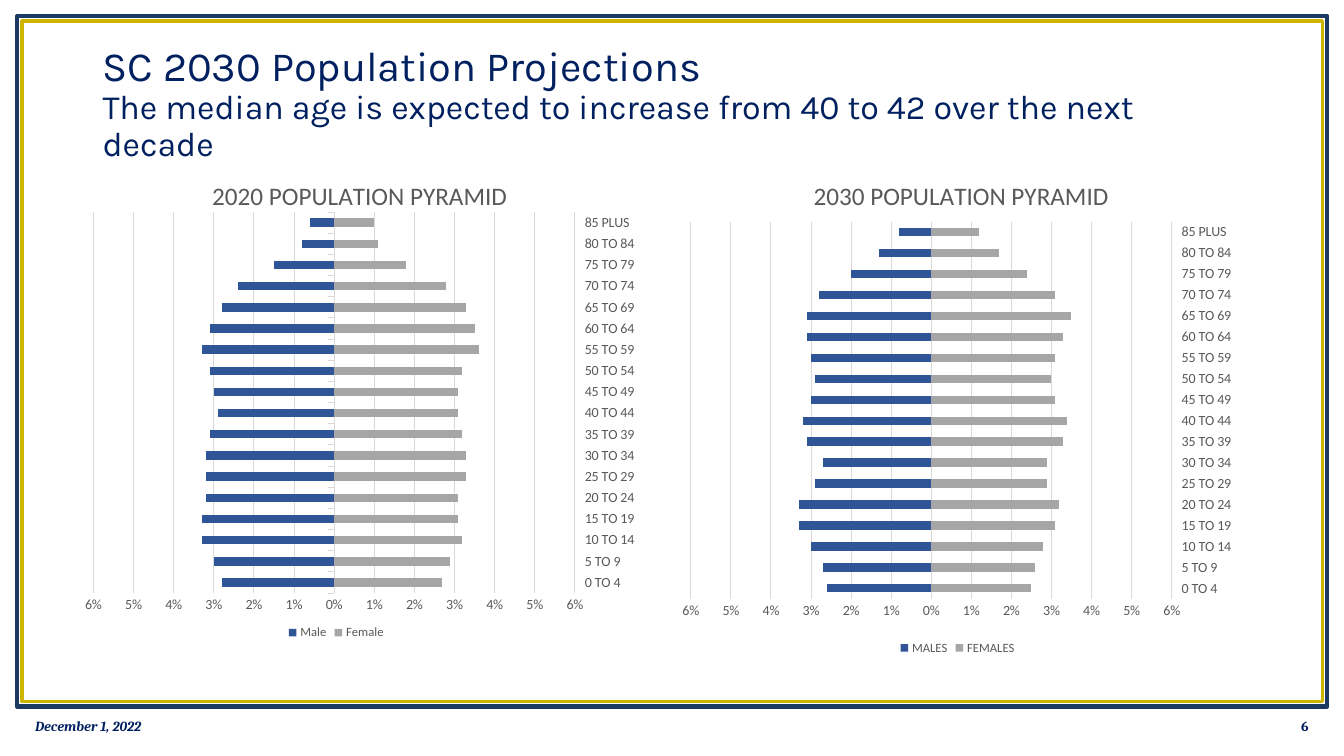
from lxml import etree
from pptx import Presentation
from pptx import util as u
from pptx.chart import data as cd
from pptx.dml.color import RGBColor
from pptx.enum import chart as ch, shapes, text
from pptx.oxml.ns import qn

Pt = u.Pt
COLORS = {"navy": "002060", "frame": "1C3961", "gold": "CCB400", "male": "2F5597",
          "female": "A6A6A6", "gray": "595959", "grid": "D9D9D9"}

# Content
HEADING = [("SC 2030 Population Projections", 29.7),
           ("The median age is expected to increase from 40 to 42 over the next decade", 24.3)]
DATE, NUMBER = "December 1, 2022", "6"
AGES = [f"{age} TO {age + 4}" for age in range(0, 85, 5)] + ["85 PLUS"]

# Shares are in tenths of a percent, youngest group first;
# layouts are fractions of the chart: x, y and, for the plot, width, height
PYRAMIDS = [
    dict(title="2030 POPULATION PYRAMID", box=(480, 108, 408, 363),
         tick=ch.XL_TICK_MARK.NONE,
         plot=(0.033, 0.139, 0.842, 0.742), title_at=(0.24, 0.045), legend_at=None,
         series=[("MALES", [26, 27, 30, 33, 33, 29, 27, 31, 32, 30, 29, 30, 31, 31, 28, 20, 13, 8]),
                 ("FEMALES", [25, 26, 28, 31, 32, 29, 29, 33, 34, 31, 30, 31, 33, 35, 31, 24, 17, 12])]),
    dict(title="2020 POPULATION PYRAMID", box=(50.4, 108, 408, 353.5),
         tick=ch.XL_TICK_MARK.OUTSIDE,
         plot=(0.04, 0.123, 0.843, 0.77), title_at=(0.24, 0.045), legend_at=(0.375, 0.95),
         series=[("Male", [28, 30, 33, 33, 32, 32, 32, 31, 29, 30, 31, 33, 31, 28, 24, 15, 8, 6]),
                 ("Female", [27, 29, 32, 31, 31, 33, 33, 32, 31, 31, 32, 36, 35, 33, 28, 18, 11, 10])]),
]


def rgb(name):
    return RGBColor.from_string(COLORS[name])


def style(font, size, color="gray", face="Calibri", bold=False, italic=False):
    font.size, font.name, font.bold, font.italic = Pt(size), face, bold, italic
    font.color.rgb = rgb(color)


def add_text(page, box, lines, face="Cambria", align=text.PP_ALIGN.LEFT,
             anchor=text.MSO_ANCHOR.MIDDLE, spacing=1.0, bold=False, italic=False):
    frame = page.shapes.add_textbox(*map(Pt, box)).text_frame
    frame.word_wrap, frame.vertical_anchor = True, anchor
    para = frame.paragraphs[0]
    para.alignment, para.line_spacing = align, spacing
    for i, (words, size) in enumerate(lines):
        if i:
            para.add_line_break()
        span = para.add_run()
        span.text = words
        style(span.font, size, "navy", face, bold, italic)


def add_frame(page, box, color, width):
    shape = page.shapes.add_shape(shapes.MSO_SHAPE.RECTANGLE, *map(Pt, box))
    shape.shadow.inherit = False
    shape.fill.background()
    shape.line.color.rgb, shape.line.width = rgb(color), Pt(width)


def place(part, at, after=None):
    """Give a chart part a manual layout, placed after the named child."""
    old = part.find(qn("c:layout"))
    if old is not None:
        part.remove(old)
    layout = etree.Element(qn("c:layout"))
    manual = etree.SubElement(layout, qn("c:manualLayout"))
    pairs = [("xMode", "edge"), ("yMode", "edge"), *zip("xywh", at)]
    if len(at) == 4:
        pairs.insert(0, ("layoutTarget", "inner"))
    for tag, value in pairs:
        etree.SubElement(manual, qn("c:" + tag)).set("val", str(value))
    part.insert(0 if after is None else part.index(part.find(qn(after))) + 1, layout)


def add_pyramid(page, item):
    data = cd.CategoryChartData(number_format="0%;0%")
    data.categories = AGES
    for (name, shares), sign in zip(item["series"], (-1, 1)):
        data.add_series(name, [sign * share / 1000 for share in shares])
    chart = page.shapes.add_chart(ch.XL_CHART_TYPE.BAR_STACKED,
                                  *map(Pt, item["box"]), data).chart
    style(chart.font, 10)

    # Title and legend
    chart.has_title = True
    title = chart.chart_title
    title.text_frame.text = item["title"]
    style(title.text_frame.paragraphs[0].runs[0].font, 18)
    place(title._element, item["title_at"], "c:tx")
    chart.has_legend = True
    chart.legend.position = ch.XL_LEGEND_POSITION.BOTTOM
    chart.legend.include_in_layout = False
    style(chart.legend.font, 9)
    if item["legend_at"]:
        place(chart.legend._element, item["legend_at"], "c:legendPos")

    # Bars
    plot = chart.plots[0]
    plot.gap_width, plot.overlap, plot.vary_by_categories = 150, 100, False
    for series, color in zip(plot.series, ("male", "female")):
        series.invert_if_negative = False
        series.format.fill.solid()
        series.format.fill.fore_color.rgb = rgb(color)

    # Axes
    ages, share = chart.category_axis, chart.value_axis
    for axis in (ages, share):
        style(axis.tick_labels.font, 10)
        axis.minor_tick_mark = ch.XL_TICK_MARK.NONE
    ages.major_tick_mark = item["tick"]
    ages.tick_label_position = ch.XL_TICK_LABEL_POSITION.HIGH
    share.major_tick_mark = ch.XL_TICK_MARK.NONE
    share.minimum_scale, share.maximum_scale, share.major_unit = -0.06, 0.06, 0.01
    share.tick_labels.number_format = "0%;0%"
    share.tick_labels.number_format_is_linked = False
    share.format.line.fill.background()
    share.has_major_gridlines = True
    for line in (ages.format.line, share.major_gridlines.format.line):
        line.color.rgb, line.width = rgb("grid"), Pt(0.75)
    place(chart._chartSpace.chart.plotArea, item["plot"])


def main():
    deck = Presentation()
    deck.slide_width, deck.slide_height = Pt(960), Pt(540)
    page = deck.slides.add_slide(deck.slide_layouts[6])

    # Double border
    add_frame(page, (12.2, 11.5, 936, 493.2), "frame", 3)
    add_frame(page, (15.8, 15.1, 928.8, 486), "gold", 2.5)

    # Heading and footer
    add_text(page, (66.2, 28.8, 828, 79.2), HEADING, face="Karla",
             anchor=text.MSO_ANCHOR.TOP, spacing=0.9)
    add_text(page, (18, 504, 216, 28.8), [(DATE, 10)], bold=True, italic=True)
    add_text(page, (725.8, 504, 216, 28.8), [(NUMBER, 10)],
             align=text.PP_ALIGN.RIGHT, bold=True)

    # Population pyramids
    for item in PYRAMIDS:
        add_pyramid(page, item)
    deck.save("out.pptx")


if __name__ == "__main__":
    main()
